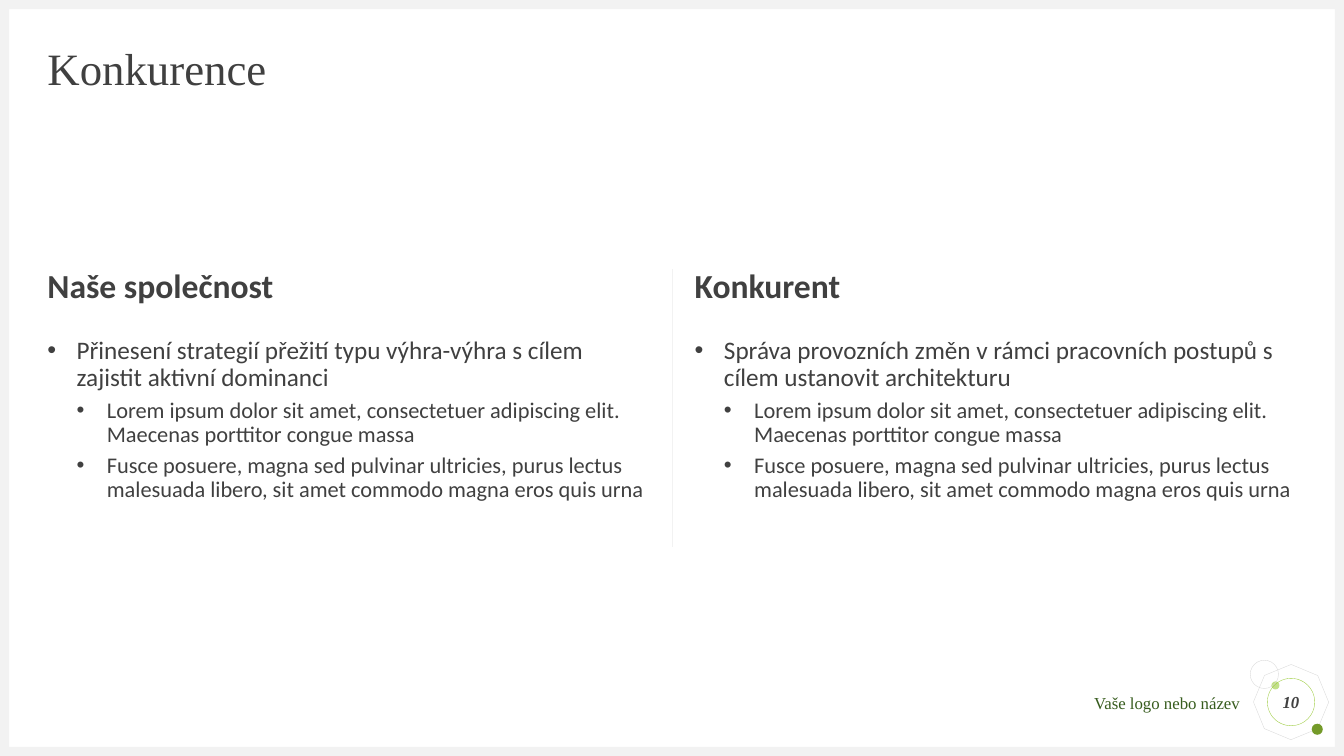
from dataclasses import dataclass

from lxml import etree
from pptx import Presentation
from pptx.dml.color import RGBColor
from pptx.enum.shapes import MSO_CONNECTOR, MSO_SHAPE
from pptx.enum.text import MSO_ANCHOR, MSO_AUTO_SIZE, PP_ALIGN
from pptx.oxml.ns import qn
from pptx.util import Emu, Pt

PX = 9144
TITLE_ONLY = 5
OCTAGON = MSO_SHAPE.OCTAGON
OVAL = MSO_SHAPE.OVAL
RECTANGLE = MSO_SHAPE.RECTANGLE
STRAIGHT = MSO_CONNECTOR.STRAIGHT
TOP = MSO_ANCHOR.TOP
MIDDLE = MSO_ANCHOR.MIDDLE
LEFT = PP_ALIGN.LEFT
CENTER = PP_ALIGN.CENTER
RIGHT = PP_ALIGN.RIGHT
NO_AUTOFIT = MSO_AUTO_SIZE.NONE


@dataclass(frozen=True)
class Theme:
    ink: str = "404040"
    brand: str = "375C1E"
    frame: str = "F2F2F2"
    outline: str = "D9D9D9"
    ring: str = "9ACB39"
    light_dot: str = "C2E088"
    dark_dot: str = "749A29"
    serif: str = "Times New Roman"
    sans: str = "Calibri"
    title: int = 32
    heading: int = 24
    point: int = 18
    detail: int = 16
    small: int = 12
    hairline: float = 0.25
    divider: float = 0.5


@dataclass(frozen=True)
class Box:
    left: int
    top: int
    width: int
    height: int

    def emu(self) -> tuple[Emu, ...]:
        return tuple(Emu(side * PX) for side in (self.left, self.top, self.width, self.height))


@dataclass(frozen=True)
class Ornament:
    preset: int
    box: Box
    fill: str | None = None
    line: str | None = None
    rotation: float = 0


@dataclass(frozen=True)
class Column:
    left: int
    heading: str
    point: str


THEME = Theme()
SLIDE_WIDTH, SLIDE_HEIGHT, BAND = 1333, 750, 9
COLUMN_WIDTH, COLUMN_TOP, POINTS_TOP = 598, 267, 335

ORNAMENTS = (
    Ornament(OCTAGON, Box(1246, 662, 69, 69), line=THEME.outline, rotation=22.7),
    Ornament(OVAL, Box(1261, 676, 8, 8), fill=THEME.light_dot),
    Ornament(OVAL, Box(1301, 718, 11, 11), fill=THEME.dark_dot),
    Ornament(OVAL, Box(1240, 655, 28, 28), line=THEME.outline),
    Ornament(RECTANGLE, Box(0, SLIDE_HEIGHT - BAND, SLIDE_WIDTH, BAND), fill=THEME.frame),
    Ornament(RECTANGLE, Box(0, 0, SLIDE_WIDTH, BAND), fill=THEME.frame),
    Ornament(RECTANGLE, Box(0, 0, BAND, SLIDE_HEIGHT), fill=THEME.frame),
    Ornament(RECTANGLE, Box(SLIDE_WIDTH - BAND, 0, BAND, SLIDE_HEIGHT), fill=THEME.frame),
)
NUMBER_RING = Ornament(OVAL, Box(1257, 673, 47, 47), line=THEME.ring)

COLUMNS = (
    Column(47, "Naše společnost",
           "Přinesení strategií přežití typu výhra-výhra s cílem zajistit aktivní dominanci"),
    Column(689, "Konkurent",
           "Správa provozních změn v rámci pracovních postupů s cílem ustanovit architekturu"),
)
DETAILS = (
    "Lorem ipsum dolor sit amet, consectetuer adipiscing elit. Maecenas porttitor congue massa",
    "Fusce posuere, magna sed pulvinar ultricies, purus lectus malesuada libero, "
    "sit amet commodo magna eros quis urna",
)


def prepare_frame(frame, anchor=TOP):
    frame.margin_left = frame.margin_top = frame.margin_right = frame.margin_bottom = 0
    frame.word_wrap = True
    frame.auto_size = NO_AUTOFIT
    frame.vertical_anchor = anchor
    return frame


def write(paragraph, text: str, *, size: int, font: str = THEME.sans, color: str = THEME.ink,
          bold: bool = False, italic: bool = False, align=LEFT, spacing: float = 1.0,
          before: int = 0, level: int = 0, indent: int = 0, hanging: int = 0) -> None:
    if hanging:
        properties = paragraph._p.get_or_add_pPr()
        properties.set("marL", str(indent * PX))
        properties.set("indent", str(-hanging * PX))
        etree.SubElement(properties, qn("a:buFont")).set("typeface", "Arial")
        etree.SubElement(properties, qn("a:buChar")).set("char", "•")
    paragraph.level = level
    paragraph.alignment = align
    paragraph.line_spacing = spacing
    paragraph.space_before = Pt(before)
    run = paragraph.add_run()
    run.text = text
    run.font.size = Pt(size)
    run.font.name = font
    run.font.bold = bold
    run.font.italic = italic
    run.font.color.rgb = RGBColor.from_string(color)


def add_text_frame(slide, box: Box):
    return prepare_frame(slide.shapes.add_textbox(*box.emu()).text_frame)


def draw_ornament(slide, ornament: Ornament):
    shape = slide.shapes.add_shape(ornament.preset, *ornament.box.emu())
    shape.shadow.inherit = False
    shape.rotation = ornament.rotation
    if ornament.fill:
        shape.fill.solid()
        shape.fill.fore_color.rgb = RGBColor.from_string(ornament.fill)
    else:
        shape.fill.background()
    if ornament.line:
        shape.line.color.rgb = RGBColor.from_string(ornament.line)
        shape.line.width = Pt(THEME.hairline)
    else:
        shape.line.fill.background()
    return shape


def draw_title(slide) -> None:
    title = slide.shapes.title
    title.left, title.top, title.width, title.height = Box(47, 47, 1240, 47).emu()
    frame = prepare_frame(title.text_frame, MIDDLE)
    write(frame.paragraphs[0], "Konkurence", size=THEME.title, font=THEME.serif, spacing=0.9)


def draw_column(slide, column: Column) -> None:
    heading = add_text_frame(slide, Box(column.left, COLUMN_TOP, COLUMN_WIDTH, 39))
    write(heading.paragraphs[0], column.heading, size=THEME.heading, bold=True, spacing=0.9)
    points = add_text_frame(slide, Box(column.left, POINTS_TOP, COLUMN_WIDTH, 342))
    write(points.paragraphs[0], column.point, size=THEME.point, spacing=0.9,
          indent=29, hanging=29)
    for detail in DETAILS:
        write(points.add_paragraph(), detail, size=THEME.detail, spacing=0.9,
              before=5, level=1, indent=59, hanging=30)


def draw_divider(slide) -> None:
    x, top, bottom = (Emu(place * PX) for place in (667, COLUMN_TOP, 543))
    divider = slide.shapes.add_connector(STRAIGHT, x, top, x, bottom)
    divider.line.color.rgb = RGBColor.from_string(THEME.frame)
    divider.line.width = Pt(THEME.divider)
    etree.SubElement(divider._element.spPr, qn("a:effectLst"))


def draw_footer(slide) -> None:
    brand = add_text_frame(slide, Box(955, 687, 275, 20))
    write(brand.paragraphs[0], "Vaše logo nebo název", size=THEME.small,
          font=THEME.serif, color=THEME.brand, align=RIGHT)
    number = prepare_frame(draw_ornament(slide, NUMBER_RING).text_frame, MIDDLE)
    write(number.paragraphs[0], "10", size=THEME.small, font=THEME.serif,
          bold=True, italic=True, align=CENTER)


def main() -> None:
    presentation = Presentation()
    presentation.slide_width = Emu(SLIDE_WIDTH * PX)
    presentation.slide_height = Emu(SLIDE_HEIGHT * PX)
    slide = presentation.slides.add_slide(presentation.slide_layouts[TITLE_ONLY])
    for ornament in ORNAMENTS:
        draw_ornament(slide, ornament)
    draw_title(slide)
    for column in COLUMNS:
        draw_column(slide, column)
    draw_divider(slide)
    draw_footer(slide)
    presentation.save("out.pptx")


if __name__ == "__main__":
    main()
